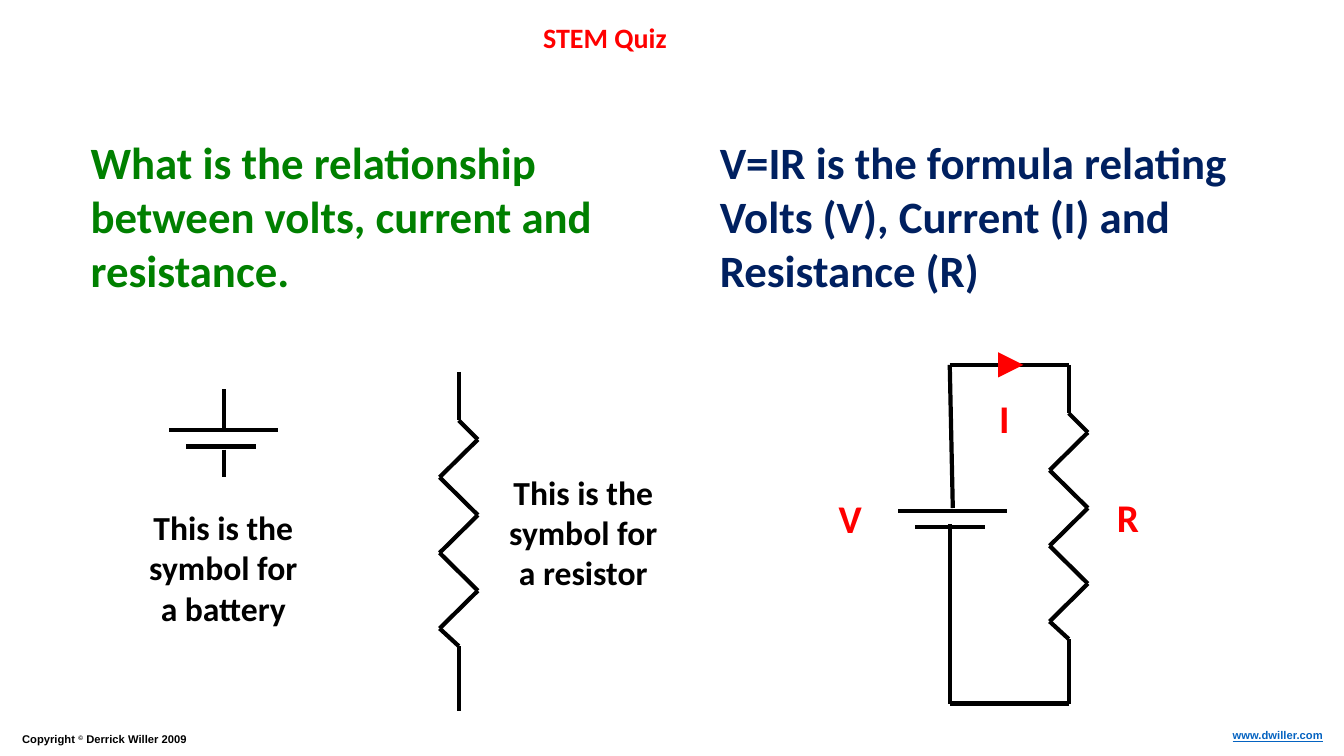
"""Build a quiz slide on volts, current and resistance with circuit symbols."""
from dataclasses import dataclass
from itertools import pairwise

from lxml import etree
from pptx import Presentation
from pptx.dml.color import RGBColor
from pptx.enum.shapes import MSO_CONNECTOR
from pptx.enum.text import MSO_ANCHOR, MSO_AUTO_SIZE, PP_ALIGN
from pptx.oxml.ns import qn
from pptx.util import Inches, Pt

STRAIGHT = MSO_CONNECTOR.STRAIGHT
LEFT, CENTER, RIGHT = PP_ALIGN.LEFT, PP_ALIGN.CENTER, PP_ALIGN.RIGHT
TOP = MSO_ANCHOR.TOP
NO_FIT, GROW = MSO_AUTO_SIZE.NONE, MSO_AUTO_SIZE.SHAPE_TO_FIT_TEXT

Point = tuple[float, float]


@dataclass(frozen=True)
class Theme:
    """Colours, fonts and sizes of the slide."""
    black: str = "000000"
    red: str = "FF0000"
    green: str = "008000"
    navy: str = "002060"
    link: str = "0563C1"
    body_font: str = "Calibri"
    footer_font: str = "Arial"
    title: int = 20
    statement: int = 32
    symbol: int = 28
    caption: int = 24
    footer: int = 8
    wire: int = 3
    arrow: int = 6


THEME = Theme()


@dataclass(frozen=True)
class Label:
    """Text with its box in inches and its format."""
    text: str
    box: tuple[float, float, float, float]
    size: int
    color: str
    align: PP_ALIGN = LEFT
    font: str = THEME.body_font
    wrap: bool = True
    underline: bool = False


TITLE = Label("STEM Quiz", (4.6, 0.15, 2.8, 0.44), THEME.title, THEME.red, CENTER, wrap=False)
COPYRIGHT = Label("Copyright ", (0.12, 7.22, 5.65, 0.24), THEME.footer, THEME.black,
                  font=THEME.footer_font)
TEXTS = (
    Label("www.dwiller.com", (11.88, 7.18, 1.34, 0.24), THEME.footer, THEME.link, RIGHT,
          THEME.footer_font, underline=True),
    Label("What is the relationship between volts, current and resistance.",
          (0.8, 1.29, 5.87, 1.72), THEME.statement, THEME.green),
    Label("V=IR is the formula relating Volts (V), Current (I) and Resistance (R)",
          (7.04, 1.29, 5.71, 1.72), THEME.statement, THEME.navy),
)
QUANTITIES = tuple(
    Label(text, box, THEME.symbol, THEME.red, wrap=False)
    for text, box in (("V", (8.22, 4.85, 0.43, 0.57)),
                      ("R", (10.98, 4.84, 0.42, 0.57)),
                      ("I", (9.81, 3.86, 0.31, 0.57)))
)
CAPTIONS = tuple(
    Label(f"This is the symbol for a {part}", (left, top, 1.83, 1.31),
          THEME.caption, THEME.black, CENTER)
    for part, left, top in (("battery", 1.3, 4.98), ("resistor", 4.87, 4.63))
)


def add_run(p, text: str, label: Label):
    """Add a bold run in the label's format."""
    r = p.add_run()
    r.text = text
    formats = {"size": Pt(label.size), "name": label.font, "bold": True,
               "underline": label.underline}
    for name, value in formats.items():
        setattr(r.font, name, value)
    r.font.color.rgb = RGBColor.from_string(label.color)
    return r


def write(s, label: Label, fit: MSO_AUTO_SIZE = GROW):
    """Fill a shape with the label and return its paragraph."""
    tf = s.text_frame
    formats = {"word_wrap": label.wrap, "auto_size": fit, "vertical_anchor": TOP}
    for name, value in formats.items():
        setattr(tf, name, value)
    p = tf.paragraphs[0]
    p.alignment = label.align
    add_run(p, label.text, label)
    return p


def add_label(shapes, label: Label):
    """Add a text box and return its paragraph."""
    return write(shapes.add_textbox(*map(Inches, label.box)), label)


def add_wire(shapes, start: Point, end: Point, color: str = THEME.black,
             width: int = THEME.wire):
    """Draw a straight line without shadow."""
    s = shapes.add_connector(STRAIGHT, *map(Inches, (*start, *end)))
    s.line.color.rgb = RGBColor.from_string(color)
    s.line.width = Pt(width)
    etree.SubElement(s._element.spPr, qn("a:effectLst"))
    return s


def add_path(shapes, points: list[Point]) -> None:
    """Join consecutive points with wires."""
    for start, end in pairwise(points):
        add_wire(shapes, start, end)


def add_battery(shapes, left: float, top: float) -> None:
    """Draw a long plate above a short one."""
    for inset, drop, length in ((0, 0, 1.08), (0.17, 0.16, 0.69)):
        x, y = left + inset, top + drop
        add_wire(shapes, (x, y), (x + length, y))


def add_resistor(shapes, x: float, top: float) -> None:
    """Draw a zigzag between two leads."""
    swing, step, turns = 0.19, 0.375, 6
    zigzag = [(x + swing * (-1) ** i, top + 0.67 + step * i) for i in range(turns)]
    add_path(shapes, [(x, top), (x, top + 0.48), *zigzag, (x, top + 2.72), (x, top + 3.36)])


def add_circuit(shapes) -> None:
    """Draw the loop with battery, resistor and current arrow."""
    left, right, top, bottom = 9.42, 10.6, 3.62, 6.98
    add_battery(shapes, 8.91, 5.07)
    add_path(shapes, [(9.45, 5.04), (left, top), (right, top)])
    add_path(shapes, [(left, 5.2), (left, bottom), (right, bottom)])
    add_resistor(shapes, right, top)
    s = add_wire(shapes, (9.91, top), (10.15, top), THEME.red, THEME.arrow)
    etree.SubElement(s.line._get_or_add_ln(), qn("a:tailEnd"), type="triangle")
    for label in QUANTITIES:
        add_label(shapes, label)


def add_symbols(shapes) -> None:
    """Draw the captioned battery and resistor symbols."""
    add_battery(shapes, 1.68, 4.27)
    for start, end in ((3.86, 4.25), (4.46, 4.73)):
        add_wire(shapes, (2.22, start), (2.22, end))
    add_resistor(shapes, 4.55, 3.69)
    for label in CAPTIONS:
        add_label(shapes, label)


def main() -> None:
    """Build and save the slide."""
    prs = Presentation()
    prs.slide_width, prs.slide_height = Inches(13.33), Inches(7.5)
    slide = prs.slides.add_slide(prs.slide_layouts[5])
    title = slide.shapes.title
    for name, value in zip(("left", "top", "width", "height"), TITLE.box):
        setattr(title, name, Inches(value))
    write(title, TITLE, NO_FIT)
    p = add_label(slide.shapes, COPYRIGHT)
    add_run(p, "©", COPYRIGHT)._r.get_or_add_rPr().set("baseline", "30000")
    add_run(p, " Derrick Willer 2009", COPYRIGHT)
    for label in TEXTS:
        add_label(slide.shapes, label)
    for draw in (add_circuit, add_symbols):
        draw(slide.shapes.add_group_shape().shapes)
    prs.save("out.pptx")


if __name__ == "__main__":
    main()
